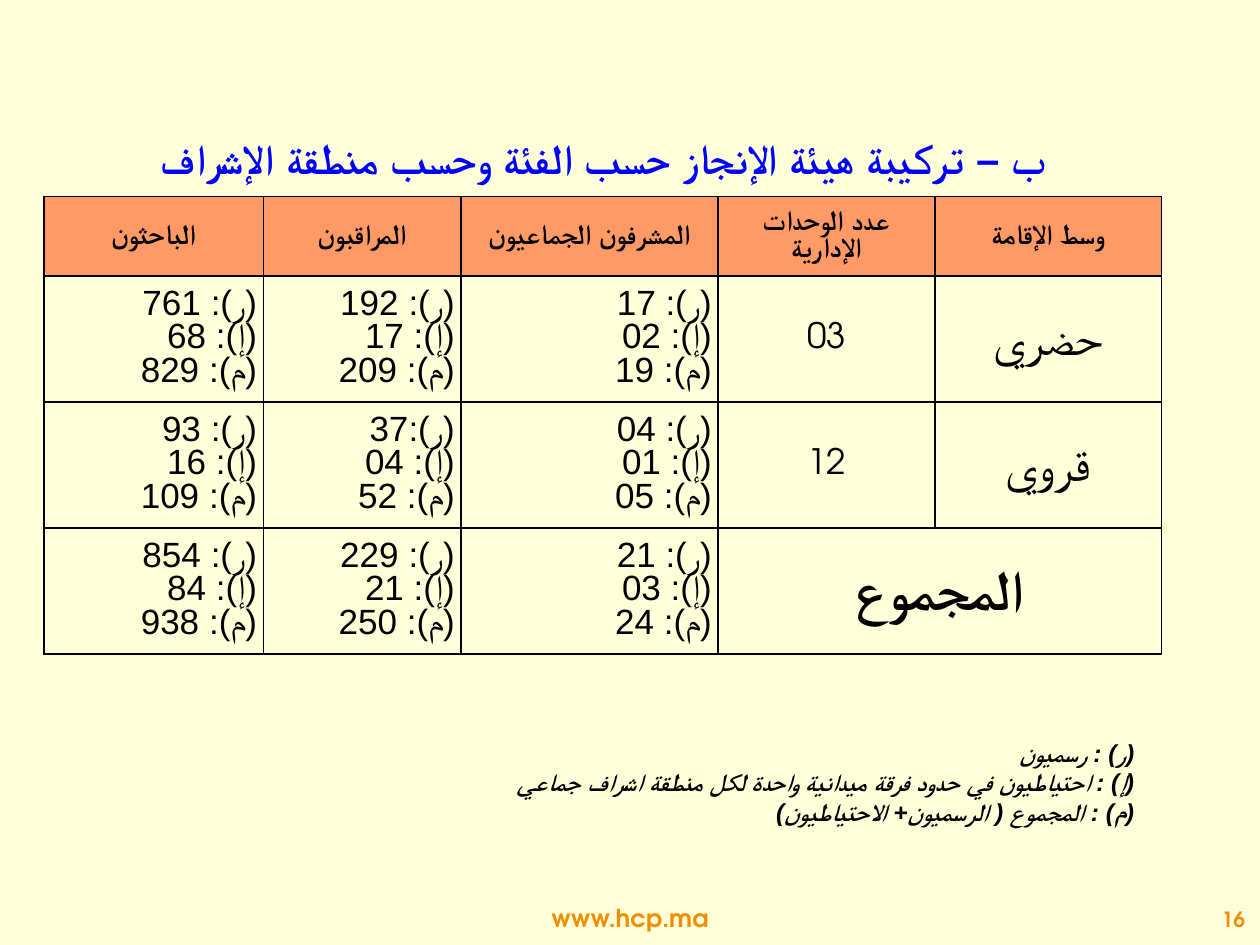
from lxml import etree
from pptx import Presentation
from pptx.dml.color import RGBColor
from pptx.enum.text import MSO_ANCHOR, PP_ALIGN
from pptx.oxml.ns import qn
from pptx.util import Inches, Pt

CREAM = RGBColor(0xFF, 0xFF, 0xD9)
BLUE = RGBColor(0x00, 0x00, 0xFF)
BLACK = RGBColor(0x00, 0x00, 0x00)
SALMON = RGBColor(0xFF, 0x99, 0x66)
ORANGE = RGBColor(0xF1, 0x8E, 0x00)
ADVENTOR = "TeX Gyre Adventor"

TITLE = "ب – تركيبة هيئة الإنجاز حسب الفئة وحسب منطقة الإشراف"
HEADERS = ["الباحثون", "المراقبون", "المشرفون الجماعيون",
           "عدد الوحدات الإدارية", "وسط الإقامة"]
# Each row: three staff counts, number of units, place of residence
ROWS = [
    ["(ر): 761\n(إ): 68\n(م): 829", "(ر): 192\n(إ): 17\n(م): 209",
     "(ر): 17\n(إ): 02\n(م): 19", "03", "حضري"],
    ["(ر): 93\n(إ): 16\n(م): 109", "(ر):37\n(إ): 04\n(م): 52",
     "(ر): 04\n(إ): 01\n(م): 05", "12", "قروي"],
    ["(ر): 854\n(إ): 84\n(م): 938", "(ر): 229\n(إ): 21\n(م): 250",
     "(ر): 21\n(إ): 03\n(م): 24", "المجموع"],
]
LEGEND = """(ر) : رسميون
(إ) : احتياطيون في حدود فرقة ميدانية واحدة لكل منطقة اشراف جماعي
(م) : المجموع ( الرسميون+ الاحتياطيون)"""
WEBSITE = "www.hcp.ma"
PAGE = "16"
COLUMN_WIDTHS = [1.74, 1.57, 2.04, 1.72, 1.8]
ROW_HEIGHTS = [0.63, 1, 1, 1]


def write(frame, content, size, font="Arial", color=BLACK, bold=False,
          italic=False, align=PP_ALIGN.RIGHT, rtl=False, spacing=None):
    frame.text = content
    frame.word_wrap = True
    for paragraph in frame.paragraphs:
        paragraph.alignment = align
        if rtl:
            paragraph._p.get_or_add_pPr().set("rtl", "1")
        if spacing:
            paragraph.line_spacing = spacing
        for run in paragraph.runs:
            run.font.size, run.font.name = Pt(size), font
            run.font.bold, run.font.italic = bold, italic
            run.font.color.rgb = color
            etree.SubElement(run._r.get_or_add_rPr(), qn("a:cs"), typeface="Arial")


def add_text(slide, box, content, size, **style):
    frame = slide.shapes.add_textbox(*map(Inches, box)).text_frame
    frame.vertical_anchor = MSO_ANCHOR.MIDDLE
    write(frame, content, size, **style)


def add_borders(cell):
    properties = cell._tc.get_or_add_tcPr()
    for position, side in enumerate(("lnL", "lnR", "lnT", "lnB")):
        line = etree.Element(qn(f"a:{side}"), w=str(Pt(1)))
        fill = etree.SubElement(line, qn("a:solidFill"))
        etree.SubElement(fill, qn("a:srgbClr"), val=str(BLACK))
        properties.insert(position, line)


def cell_style(row, column):
    if row == 0:
        return dict(size=16, font="Times New Roman", bold=True,
                    align=PP_ALIGN.CENTER, spacing=0.85)
    if column < 3:
        return dict(size=20, font=ADVENTOR, rtl=True, spacing=0.85)
    if row == len(ROWS):
        return dict(size=32, bold=True, align=PP_ALIGN.CENTER, rtl=True)
    if column == 3:
        return dict(size=20, font=ADVENTOR, align=PP_ALIGN.CENTER)
    return dict(size=28, align=PP_ALIGN.CENTER, rtl=True)


def add_staff_table(slide):
    table = slide.shapes.add_table(
        len(ROW_HEIGHTS), len(COLUMN_WIDTHS), Inches(0.35), Inches(1.56),
        Inches(sum(COLUMN_WIDTHS)), Inches(sum(ROW_HEIGHTS))).table
    table.first_row = table.horz_banding = False
    for column, width in zip(table.columns, COLUMN_WIDTHS):
        column.width = Inches(width)
    for row, height in zip(table.rows, ROW_HEIGHTS):
        row.height = Inches(height)
    table.cell(3, 3).merge(table.cell(3, 4))

    for cell in table.iter_cells():
        cell.vertical_anchor = MSO_ANCHOR.MIDDLE
        cell.margin_left = cell.margin_right = Inches(0.05)
        cell.margin_top = cell.margin_bottom = 0
        cell.fill.background()
        add_borders(cell)
    for r, contents in enumerate([HEADERS] + ROWS):
        for c, content in enumerate(contents):
            cell = table.cell(r, c)
            write(cell.text_frame, content, **cell_style(r, c))
            if r == 0:
                cell.fill.solid()
                cell.fill.fore_color.rgb = SALMON


def main():
    deck = Presentation()
    deck.slide_width, deck.slide_height = Inches(10), Inches(7.5)
    slide = deck.slides.add_slide(deck.slide_layouts[5])
    slide.background.fill.solid()
    slide.background.fill.fore_color.rgb = CREAM

    title = slide.shapes.title
    title.left, title.top = Inches(1.09), Inches(1.02)
    title.width, title.height = Inches(7.64), Inches(0.63)
    frame = title.text_frame
    frame.vertical_anchor = MSO_ANCHOR.BOTTOM
    frame.margin_right, frame.margin_bottom = Inches(0.43), Inches(0.2)
    write(frame, TITLE, 24, color=BLUE, bold=True, rtl=True)

    add_staff_table(slide)
    add_text(slide, (0.75, 5.8, 8.35, 0.81), LEGEND, 14,
             bold=True, italic=True, rtl=True)
    add_text(slide, (3.82, 7.12, 2.36, 0.33), WEBSITE, 14, font=ADVENTOR,
             color=ORANGE, bold=True, align=PP_ALIGN.CENTER)
    add_text(slide, (8.46, 7.12, 1.52, 0.35), PAGE, 12, font=ADVENTOR,
             color=ORANGE, bold=True)
    deck.save("out.pptx")


if __name__ == "__main__":
    main()
